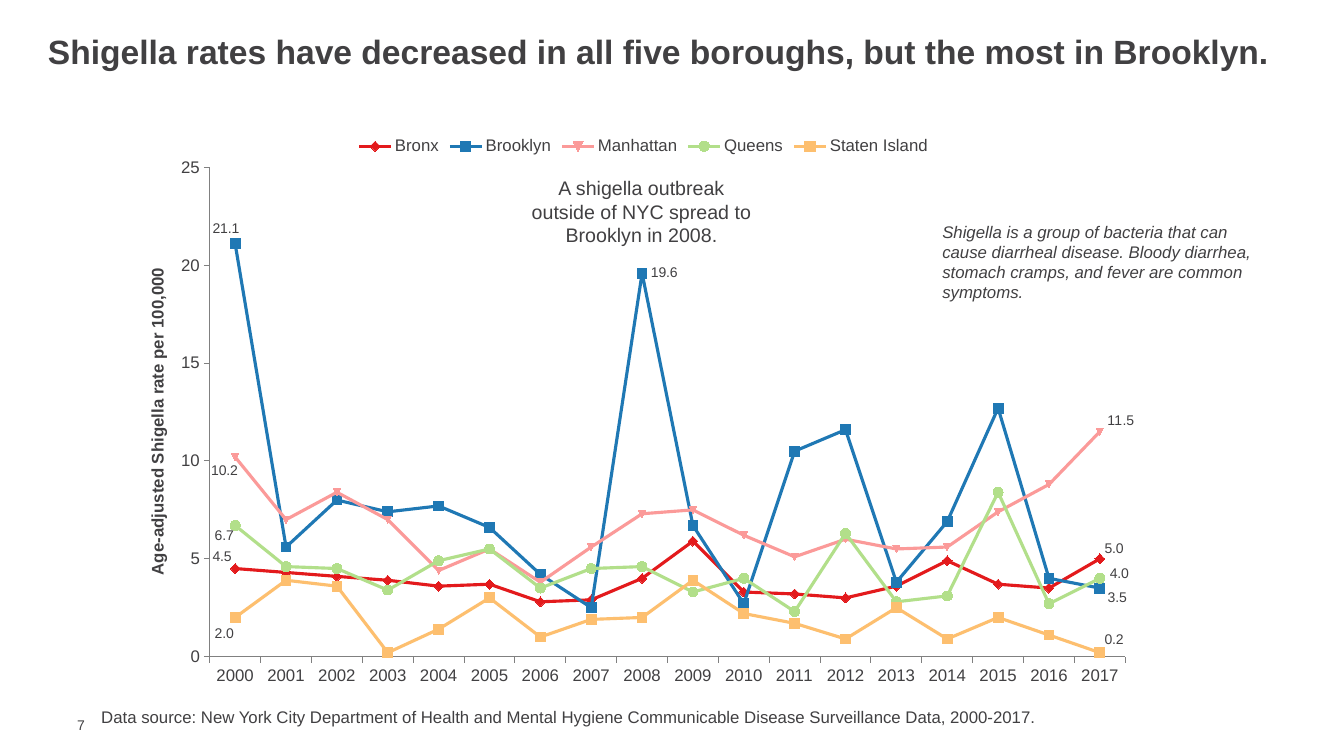
from lxml import etree
from pptx import Presentation
from pptx.chart.data import CategoryChartData
from pptx.dml.color import RGBColor
from pptx.enum.chart import XL_CHART_TYPE as ChartType, XL_LABEL_POSITION as LabelPos
from pptx.enum.chart import XL_LEGEND_POSITION as LegendPos, XL_MARKER_STYLE as Marker
from pptx.enum.chart import XL_TICK_MARK as Tick
from pptx.enum.shapes import MSO_SHAPE as Shape
from pptx.enum.text import MSO_ANCHOR as Anchor, PP_ALIGN as Align
from pptx.oxml.ns import qn
from pptx.util import Pt

PX = 9525
COLORS = {
    "text": "414042", "axis": "808080", "white": "FFFFFF",
    "Bronx": "E31A1C", "Brooklyn": "1F78B4", "Manhattan": "FB9A99",
    "Queens": "B2DF8A", "Staten Island": "FDBF6F",
}
RATES = {
    "Bronx": [4.5, 4.3, 4.1, 3.9, 3.6, 3.7, 2.8, 2.9, 4, 5.9, 3.3, 3.2, 3, 3.6, 4.9, 3.7, 3.5, 5],
    "Brooklyn": [21.1, 5.6, 8, 7.4, 7.7, 6.6, 4.2, 2.5, 19.6, 6.7, 2.7, 10.5, 11.6, 3.8, 6.9,
                 12.7, 4, 3.5],
    "Manhattan": [10.2, 7, 8.4, 7, 4.4, 5.5, 3.8, 5.6, 7.3, 7.5, 6.2, 5.1, 6, 5.5, 5.6, 7.4,
                  8.8, 11.5],
    "Queens": [6.7, 4.6, 4.5, 3.4, 4.9, 5.5, 3.5, 4.5, 4.6, 3.3, 4, 2.3, 6.3, 2.8, 3.1, 8.4,
               2.7, 4],
    "Staten Island": [2, 3.9, 3.6, 0.2, 1.4, 3, 1, 1.9, 2, 3.9, 2.2, 1.7, 0.9, 2.5, 0.9, 2,
                      1.1, 0.2],
}
MARKERS = {
    "Bronx": (Marker.DIAMOND, 7), "Brooklyn": (Marker.SQUARE, 7), "Manhattan": (None, 5),
    "Queens": (Marker.CIRCLE, 7), "Staten Island": (Marker.SQUARE, 7),
}
LABEL_SHIFTS = {
    "Bronx": {0: (-30, -11), 17: (-4, -10)},
    "Brooklyn": {0: (-30, -14), 8: (0, 0), 17: (-1, 9)},
    "Manhattan": {0: (-30, 13), 17: (0, -10)},
    "Queens": {0: (-28, 10), 17: (1, -4)},
    "Staten Island": {0: (-28, 15), 17: (-4, -12)},
}


def color(key):
    return RGBColor.from_string(COLORS[key])


def manual_layout(**values):
    layout = etree.Element(qn("c:layout"))
    manual = etree.SubElement(layout, qn("c:manualLayout"))
    for tag, value in values.items():
        etree.SubElement(manual, qn(f"c:{tag}")).set("val", str(value))
    return layout


class RateSlide:
    font_name = "Arial"

    def __init__(self, deck):
        self.slide = deck.slides.add_slide(deck.slide_layouts[5])

    def style(self, font, size, bold=False, italic=False):
        font.name, font.size = self.font_name, Pt(size)
        font.bold, font.italic = bold, italic
        font.color.rgb = color("text")

    def fill_text(self, shape, text, size, anchor=Anchor.TOP, align=Align.LEFT, **look):
        frame = shape.text_frame
        frame.text = text
        frame.word_wrap = True
        frame.vertical_anchor = anchor
        paragraph = frame.paragraphs[0]
        paragraph.alignment = align
        self.style(paragraph.font, size, **look)
        return frame

    def title(self, text, box):
        heading = self.slide.shapes.title
        heading.left, heading.top, heading.width, heading.height = (n * PX for n in box)
        frame = self.fill_text(heading, text, 24, Anchor.MIDDLE, bold=True)
        frame.paragraphs[0].line_spacing = 0.8

    def text(self, text, box, size, **look):
        note = self.slide.shapes.add_textbox(*(n * PX for n in box))
        return self.fill_text(note, text, size, **look)

    def callout(self, text, box):
        panel = self.slide.shapes.add_shape(Shape.RECTANGLE, *(n * PX for n in box))
        panel.shadow.inherit = False
        panel.fill.solid()
        panel.fill.fore_color.rgb = color("white")
        panel.line.fill.background()
        self.fill_text(panel, text, 14, Anchor.MIDDLE, Align.CENTER)

    def axis(self, axis):
        axis.has_major_gridlines = False
        axis.major_tick_mark, axis.minor_tick_mark = Tick.OUTSIDE, Tick.NONE
        axis.format.line.color.rgb = color("axis")
        axis.format.line.width = Pt(0.75)
        self.style(axis.tick_labels.font, 12)

    def series(self, series, width, height):
        name = series.name
        series.smooth = False
        series.format.line.color.rgb = color(name)
        series.format.line.width = Pt(2.25)
        symbol, size = MARKERS[name]
        if symbol is not None:
            series.marker.style = symbol
        series.marker.size = size
        series.marker.format.fill.solid()
        series.marker.format.fill.fore_color.rgb = color(name)
        series.marker.format.line.color.rgb = color(name)
        series.data_labels.show_value = False
        for index, (right, down) in LABEL_SHIFTS[name].items():
            label = series.points[index].data_label
            self.style(label.font, 10)
            label.position = LabelPos.RIGHT
            if right or down:
                entry = series.data_labels._element.xpath(f'c:dLbl[c:idx/@val="{index}"]')[0]
                entry.insert(1, manual_layout(x=round(right / width, 4), y=round(down / height, 4)))

    def line_chart(self, years, rates, axis_title, box):
        data = CategoryChartData(number_format="0.0")
        data.categories = years
        for borough, values in rates.items():
            data.add_series(borough, values)
        chart = self.slide.shapes.add_chart(
            ChartType.LINE_MARKERS, *(n * PX for n in box), data).chart
        self.style(chart.font, 10)
        chart.has_title = False
        chart.has_legend = True
        chart.legend.position = LegendPos.TOP
        chart.legend.include_in_layout = False
        self.style(chart.legend.font, 12)
        self.axis(chart.category_axis)
        rate_axis = chart.value_axis
        self.axis(rate_axis)
        rate_axis.minimum_scale, rate_axis.maximum_scale, rate_axis.major_unit = 0, 25, 5
        rate_axis.tick_labels.number_format = "0"
        rate_axis.tick_labels.number_format_is_linked = False
        caption = rate_axis.axis_title.text_frame
        caption.text = axis_title
        self.style(caption.paragraphs[0].font, 12, bold=True)
        plot = chart.plots[0]
        plot.vary_by_categories = False
        for series in plot.series:
            self.series(series, *box[2:])
        area = chart._chartSpace.chart.plotArea
        for default in area.findall(qn("c:layout")):
            area.remove(default)
        area.insert(0, manual_layout(layoutTarget="inner", xMode="edge", yMode="edge",
                                     x=0.066, y=0.074, w=0.916, h=0.869))


def main():
    deck = Presentation()
    deck.slide_width, deck.slide_height = 1280 * PX, 720 * PX
    page = RateSlide(deck)
    number = page.text("7", (64, 682, 41, 16), 10, anchor=Anchor.MIDDLE)
    number.margin_top = number.margin_bottom = number.margin_right = 0
    page.text("Data source: New York City Department of Health and Mental Hygiene "
              "Communicable Disease Surveillance Data, 2000-2017.", (87, 668, 952, 29), 12)
    page.line_chart([str(year) for year in range(2000, 2018)], RATES,
                    "Age-adjusted Shigella rate per 100,000", (137, 120, 952, 536))
    page.title("Shigella rates have decreased in all five boroughs, but the most in Brooklyn.",
               (36, 32, 1208, 40))
    page.text("Shigella is a group of bacteria that can cause diarrheal disease. Bloody diarrhea, "
              "stomach cramps, and fever are common symptoms.", (888, 206, 336, 107), 12, italic=True)
    page.callout("A shigella outbreak outside of NYC spread to Brooklyn in 2008.",
                 (495, 160, 232, 83))
    deck.save("out.pptx")


if __name__ == "__main__":
    main()
